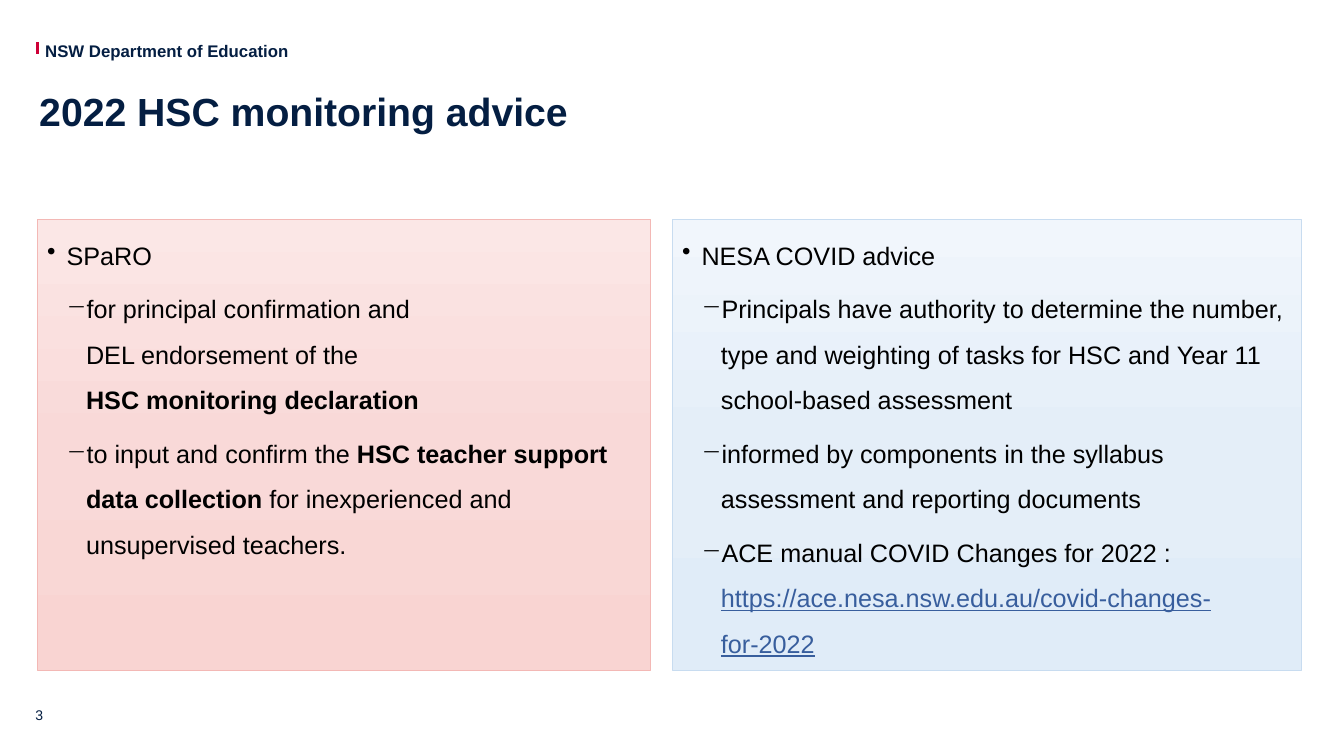
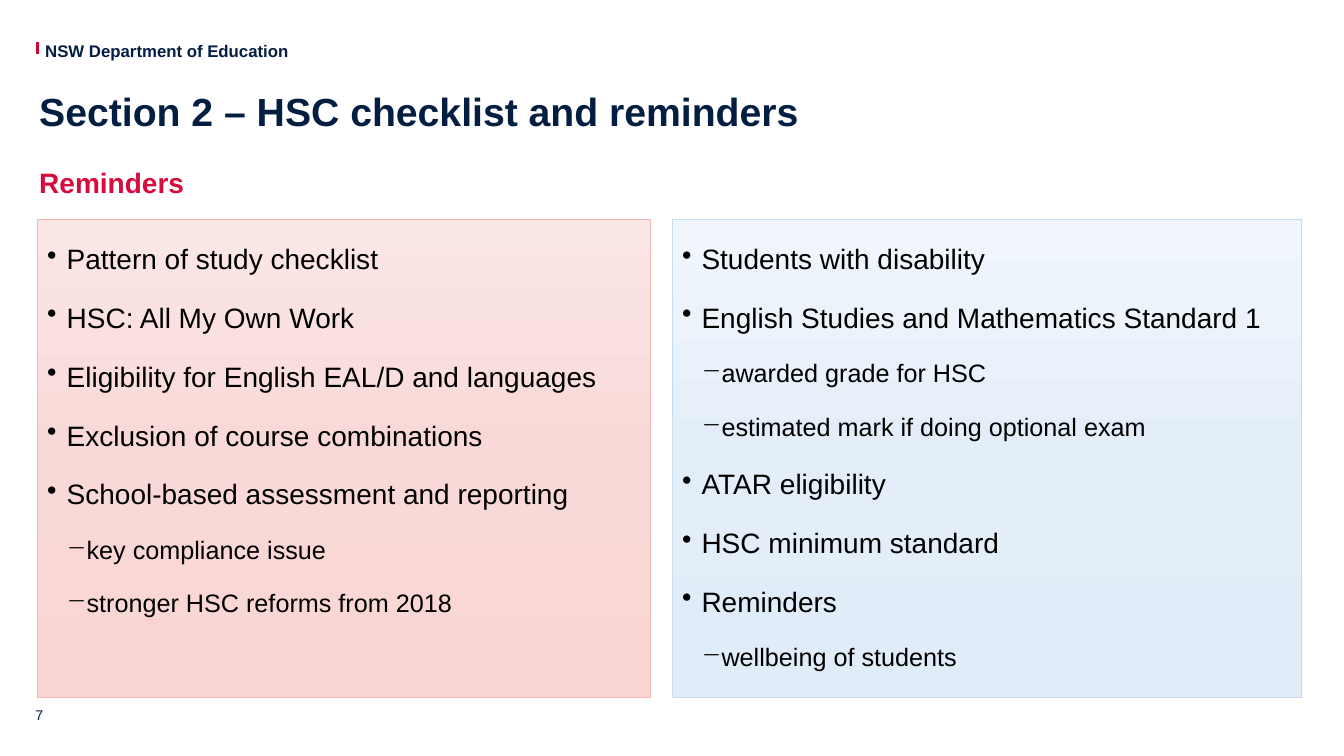
"""Build two slides of HSC monitoring advice and reminders."""
from copy import deepcopy
from typing import Any, NamedTuple

from lxml.etree import SubElement
from pptx import Presentation
from pptx.dml.color import RGBColor
from pptx.enum.shapes import MSO_CONNECTOR, MSO_SHAPE
from pptx.enum.text import MSO_ANCHOR
from pptx.oxml.ns import qn
from pptx.util import Cm, Pt

NAVY = RGBColor(0x04, 0x1E, 0x42)
RED = RGBColor(0xCE, 0x00, 0x37)
ROSE = RGBColor(0xD7, 0x0C, 0x3D)
BLACK = RGBColor(0x00, 0x00, 0x00)
BLUE = RGBColor(0x38, 0x5E, 0x9D)
PINK_EDGE = RGBColor(0xF3, 0xB8, 0xB5)
PINKS = (RGBColor(0xFB, 0xE7, 0xE6), RGBColor(0xF9, 0xD9, 0xD8), RGBColor(0xF9, 0xD4, 0xD2))
SKY_EDGE = RGBColor(0xC8, 0xDC, 0xF0)
SKIES = (RGBColor(0xF1, 0xF6, 0xFC), RGBColor(0xE4, 0xEE, 0xF8), RGBColor(0xE0, 0xEC, 0xF8))

FONT = "Arial"
STEP = 0.49
MARKS = "•−"
BODY = {"line_spacing": 1.5, "space_after": Pt(6)}
BARE = {"margin_left": 0, "margin_top": 0, "margin_right": 0, "margin_bottom": 0}


class Box(NamedTuple):
    left: float
    top: float
    width: float
    height: float


class Run(NamedTuple):
    text: str
    bold: bool = False
    link: bool = False


class Item(NamedTuple):
    level: int
    size: int
    runs: tuple[Run, ...]


class Look(NamedTuple):
    left: float
    width: float
    edge: RGBColor
    tints: tuple[RGBColor, ...]


class Page(NamedTuple):
    number: str
    title: str
    height: float
    lists: tuple[tuple[Item, ...], ...]
    subhead: str = ""


LOOKS = (Look(0.94, 15.44, PINK_EDGE, PINKS), Look(16.94, 15.85, SKY_EDGE, SKIES))


def top(text: str, size: int = 20) -> Item:
    """Make a first-level item."""
    return Item(0, size, (Run(text),))


def sub(*runs: Run | str) -> Item:
    """Make a second-level item."""
    return Item(1, 18, tuple(Run(r) if isinstance(r, str) else r for r in runs))


PAGES = (
    Page("3", "2022 HSC monitoring advice", 11.35, (
        (
            top("SPaRO", 18),
            sub("for principal confirmation and\nDEL endorsement of the\n",
                Run("HSC monitoring declaration", bold=True)),
            sub("to input and confirm the ",
                Run("HSC teacher support data collection", bold=True),
                " for inexperienced and unsupervised teachers."),
        ),
        (
            top("NESA COVID advice", 18),
            sub("Principals have authority to determine the number, type and weighting "
                "of tasks for HSC and Year 11 school-based assessment"),
            sub("informed by components in the syllabus assessment and reporting documents"),
            sub("ACE manual COVID Changes for 2022 : ",
                Run("https://ace.nesa.nsw.edu.au/covid-changes-for-2022", link=True)),
        ),
    )),
    Page("7", "Section 2 – HSC checklist and reminders", 12.04, (
        (
            top("Pattern of study checklist"),
            top("HSC: All My Own Work"),
            top("Eligibility for English EAL/D and languages"),
            top("Exclusion of course combinations"),
            top("School-based assessment and reporting"),
            sub("key compliance issue"),
            sub("stronger HSC reforms from 2018"),
        ),
        (
            top("Students with disability"),
            top("English Studies and Mathematics Standard 1"),
            sub("awarded grade for HSC"),
            sub("estimated mark if doing optional exam"),
            top("ATAR eligibility"),
            top("HSC minimum standard"),
            top("Reminders"),
            sub("wellbeing of students"),
        ),
    ), "Reminders"),
)


def style(thing: Any, values: dict[str, Any]) -> None:
    """Set each named value on an object."""
    for name, value in values.items():
        setattr(thing, name, value)


def write(para: Any, text: str, color: RGBColor, **values: Any) -> None:
    """Add styled text to a paragraph, with line breaks."""
    for index, part in enumerate(text.split("\n")):
        if index:
            para.add_line_break()
        if part:
            run = para.add_run()
            run.text = part
            style(run.font, {"name": FONT, **values})
            run.font.color.rgb = color


def label(slide: Any, box: Box, text: str, size: int, color: RGBColor, bold: bool = True,
          frame: dict[str, Any] | None = None, para: dict[str, Any] | None = None) -> None:
    """Draw a one-paragraph text box."""
    body = slide.shapes.add_textbox(*map(Cm, box)).text_frame
    style(body, {"word_wrap": True, **BARE, **(frame or {})})
    style(body.paragraphs[0], para or {})
    write(body.paragraphs[0], text, color, size=Pt(size), bold=bold)


def shade(fill: Any, shape: Any, tints: tuple[RGBColor, ...]) -> None:
    """Fill a shape with an even gradient from top to bottom."""
    fill.gradient()
    fill.gradient_angle = 270
    stops = shape._element.spPr.find(qn("a:gradFill")).find(qn("a:gsLst"))
    while len(stops) < len(tints):
        stops.append(deepcopy(stops[-1]))
    for index, (stop, tint) in enumerate(zip(fill.gradient_stops, tints)):
        stop.position = index / (len(tints) - 1)
        stop.color.rgb = tint


def panel(slide: Any, look: Look, height: float, items: tuple[Item, ...]) -> None:
    """Draw a shaded panel with a two-level list."""
    box = Box(look.left, 5.54, look.width, height)
    shape = slide.shapes.add_shape(MSO_SHAPE.RECTANGLE, *map(Cm, box))
    shape.shadow.inherit = False
    shade(shape.fill, shape, look.tints)
    shape.line.color.rgb = look.edge
    shape.line.width = Pt(0.5)
    body = shape.text_frame
    style(body, {"word_wrap": True, "vertical_anchor": MSO_ANCHOR.TOP})
    for index, item in enumerate(items):
        para = body.add_paragraph() if index else body.paragraphs[0]
        style(para, {"level": item.level, "alignment": 1, **BODY})
        props = para._p.get_or_add_pPr()
        props.set("marL", str(Cm(STEP * (item.level + 1))))
        props.set("indent", str(-Cm(STEP)))
        SubElement(props, qn("a:buChar")).set("char", MARKS[item.level])
        for run in item.runs:
            write(para, run.text, BLUE if run.link else BLACK,
                  size=Pt(item.size), bold=run.bold, underline=run.link)


def frame(slide: Any, page: Page) -> None:
    """Draw the header, title and page number."""
    tick = slide.shapes.add_connector(
        MSO_CONNECTOR.STRAIGHT, Cm(0.94), Cm(1.07), Cm(0.94), Cm(1.37))
    tick.line.color.rgb = RED
    tick.line.width = Pt(2.5)
    SubElement(tick._element.spPr, qn("a:effectLst"))
    label(slide, Box(1.14, 1.02, 6.2, 0.51), "NSW Department of Education", 12, NAVY,
          frame={"word_wrap": False})
    label(slide, Box(0.99, 2.16, 31.83, 1.4), page.title, 28, NAVY,
          frame={"vertical_anchor": MSO_ANCHOR.MIDDLE}, para={"line_spacing": 0.9})
    label(slide, Box(0.89, 17.2, 0.81, 1.02), page.number, 10, NAVY, bold=False,
          frame={"vertical_anchor": MSO_ANCHOR.BOTTOM})


def main() -> None:
    """Build and save the deck."""
    deck = Presentation()
    style(deck, {"slide_width": Cm(33.87), "slide_height": Cm(19.05)})
    for page in PAGES:
        slide = deck.slides.add_slide(deck.slide_layouts[6])
        frame(slide, page)
        if page.subhead:
            label(slide, Box(0.99, 3.61, 31.85, 1.5), page.subhead, 20, ROSE,
                  frame={"margin_top": Cm(0.13)}, para=BODY)
        for look, items in zip(LOOKS, page.lists):
            panel(slide, look, page.height, items)
    deck.save("out.pptx")


if __name__ == "__main__":
    main()
